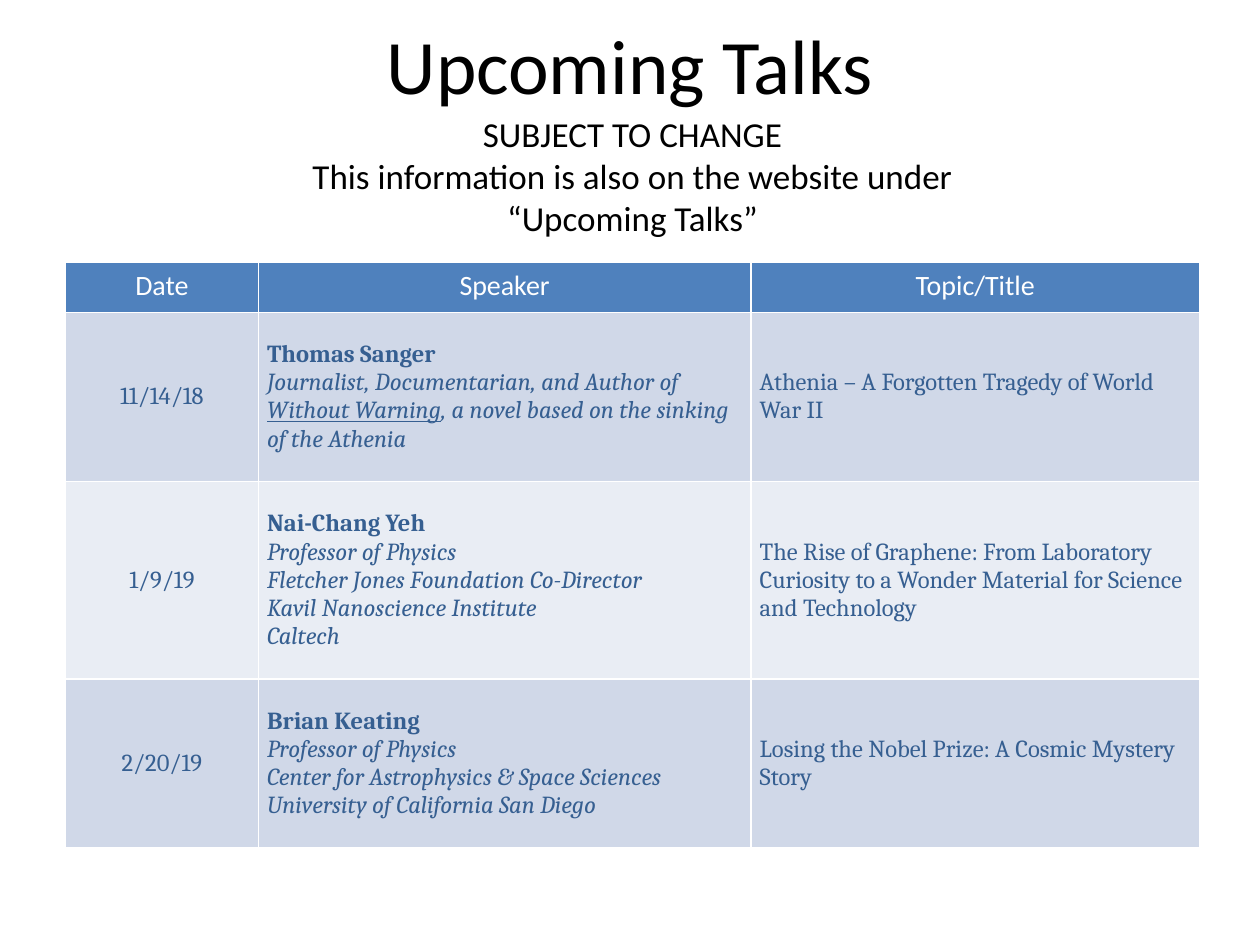
from lxml import etree
from pptx import Presentation
from pptx.dml.color import RGBColor
from pptx.enum.text import MSO_ANCHOR as Anchor, PP_ALIGN as Align
from pptx.oxml.ns import qn
from pptx.util import Inches, Pt

BLACK = RGBColor(0x00, 0x00, 0x00)
WHITE = RGBColor(0xFF, 0xFF, 0xFF)
HEADER_BLUE = RGBColor(0x4F, 0x81, 0xBD)
TEXT_BLUE = RGBColor(0x36, 0x5F, 0x91)
BANDS = (RGBColor(0xD0, 0xD8, 0xE8), RGBColor(0xE9, 0xED, 0xF4))

HEADINGS = ("Date", "Speaker", "Topic/Title")
COLUMN_WIDTHS = (1.53, 3.91, 3.56)
ROW_HEIGHTS = (0.4, 1.34, 1.57, 1.34)

# Each talk: date, speaker, lines about the speaker, topic.
# A line is a list of (text, underlined) pieces.
TALKS = (
    ("11/14/18", "Thomas Sanger",
     [[("Journalist, Documentarian, and Author of ", False),
       ("Without Warning", True),
       (", a novel based on the sinking of the Athenia", False)]],
     "Athenia – A Forgotten Tragedy of World War II"),
    ("1/9/19", "Nai-Chang Yeh",
     [[("Professor of Physics", False)],
      [("Fletcher Jones Foundation Co-Director", False)],
      [("Kavil Nanoscience Institute", False)],
      [("Caltech", False)]],
     "The Rise of Graphene: From Laboratory Curiosity to a Wonder Material "
     "for Science and Technology"),
    ("2/20/19", "Brian Keating",
     [[("Professor of Physics", False)],
      [("Center for Astrophysics & Space Sciences", False)],
      [("University of California San Diego", False)]],
     "Losing the Nobel Prize: A Cosmic Mystery Story"),
)


def add_run(paragraph, text, font="Calibri", size=20, color=BLACK,
            bold=False, italic=False, underline=False, align=Align.CENTER):
    paragraph.alignment = align
    run = paragraph.add_run()
    run.text = text
    run.font.name = font
    run.font.size = Pt(size)
    run.font.color.rgb = color
    run.font.bold = bold
    run.font.italic = italic
    run.font.underline = underline


class TalksSlide:
    body_style = dict(font="Cambria", size=14, color=TEXT_BLUE)

    def __init__(self, presentation):
        self.slide = presentation.slides.add_slide(presentation.slide_layouts[5])

    def title(self, text, left, top, width, height):
        shape = self.slide.shapes.title
        shape.left, shape.top = Inches(left), Inches(top)
        shape.width, shape.height = Inches(width), Inches(height)
        shape.text_frame.vertical_anchor = Anchor.MIDDLE
        add_run(shape.text_frame.paragraphs[0], text, size=44)

    def text_box(self, lines, left, top, width, height):
        shape = self.slide.shapes.add_textbox(
            Inches(left), Inches(top), Inches(width), Inches(height))
        frame = shape.text_frame
        frame.word_wrap = True
        for index, line in enumerate(lines):
            paragraph = frame.add_paragraph() if index else frame.paragraphs[0]
            add_run(paragraph, line)

    def table(self, left, top):
        table = self.slide.shapes.add_table(
            len(ROW_HEIGHTS), len(COLUMN_WIDTHS), Inches(left), Inches(top),
            Inches(sum(COLUMN_WIDTHS)), Inches(sum(ROW_HEIGHTS))).table
        for column, width in zip(table.columns, COLUMN_WIDTHS):
            column.width = Inches(width)
        for row, height in zip(table.rows, ROW_HEIGHTS):
            row.height = Inches(height)

        # Header row
        for column, heading in enumerate(HEADINGS):
            cell = table.cell(0, column)
            self.cell_format(cell, HEADER_BLUE)
            add_run(cell.text_frame.paragraphs[0], heading, size=16, color=WHITE)

        # One row per talk
        for row, (date, speaker, details, topic) in enumerate(TALKS, start=1):
            cells = [table.cell(row, column) for column in range(len(HEADINGS))]
            for cell in cells:
                self.cell_format(cell, BANDS[(row - 1) % 2])
                cell.vertical_anchor = Anchor.MIDDLE
                cell.margin_left = cell.margin_right = Inches(0.07)
                cell.margin_top = cell.margin_bottom = 0
            date_frame, speaker_frame, topic_frame = (
                cell.text_frame for cell in cells)
            add_run(date_frame.paragraphs[0], date, **self.body_style)
            add_run(speaker_frame.paragraphs[0], speaker, bold=True,
                    align=Align.LEFT, **self.body_style)
            for pieces in details:
                paragraph = speaker_frame.add_paragraph()
                for text, underline in pieces:
                    add_run(paragraph, text, italic=True, underline=underline,
                            align=Align.LEFT, **self.body_style)
            add_run(topic_frame.paragraphs[0], topic, align=Align.LEFT,
                    **self.body_style)

    def cell_format(self, cell, color):
        # Borders come before the fill in the cell properties
        properties = cell._tc.get_or_add_tcPr()
        for side in ("a:lnL", "a:lnR", "a:lnT", "a:lnB"):
            line = etree.SubElement(properties, qn(side), w=str(Pt(1)))
            fill = etree.SubElement(line, qn("a:solidFill"))
            etree.SubElement(fill, qn("a:srgbClr"), val=str(WHITE))
        cell.fill.solid()
        cell.fill.fore_color.rgb = color


def main():
    presentation = Presentation()
    presentation.slide_width = Inches(10)
    presentation.slide_height = Inches(7.5)

    talks = TalksSlide(presentation)
    talks.title("Upcoming Talks", 0, -0.12, 10, 1.25)
    talks.table(0.52, 2.08)
    talks.text_box(("SUBJECT TO CHANGE",
                    "This information is also on the website under",
                    "“Upcoming Talks”"), 0.52, 0.84, 9, 1.11)
    presentation.save("out.pptx")


if __name__ == "__main__":
    main()
